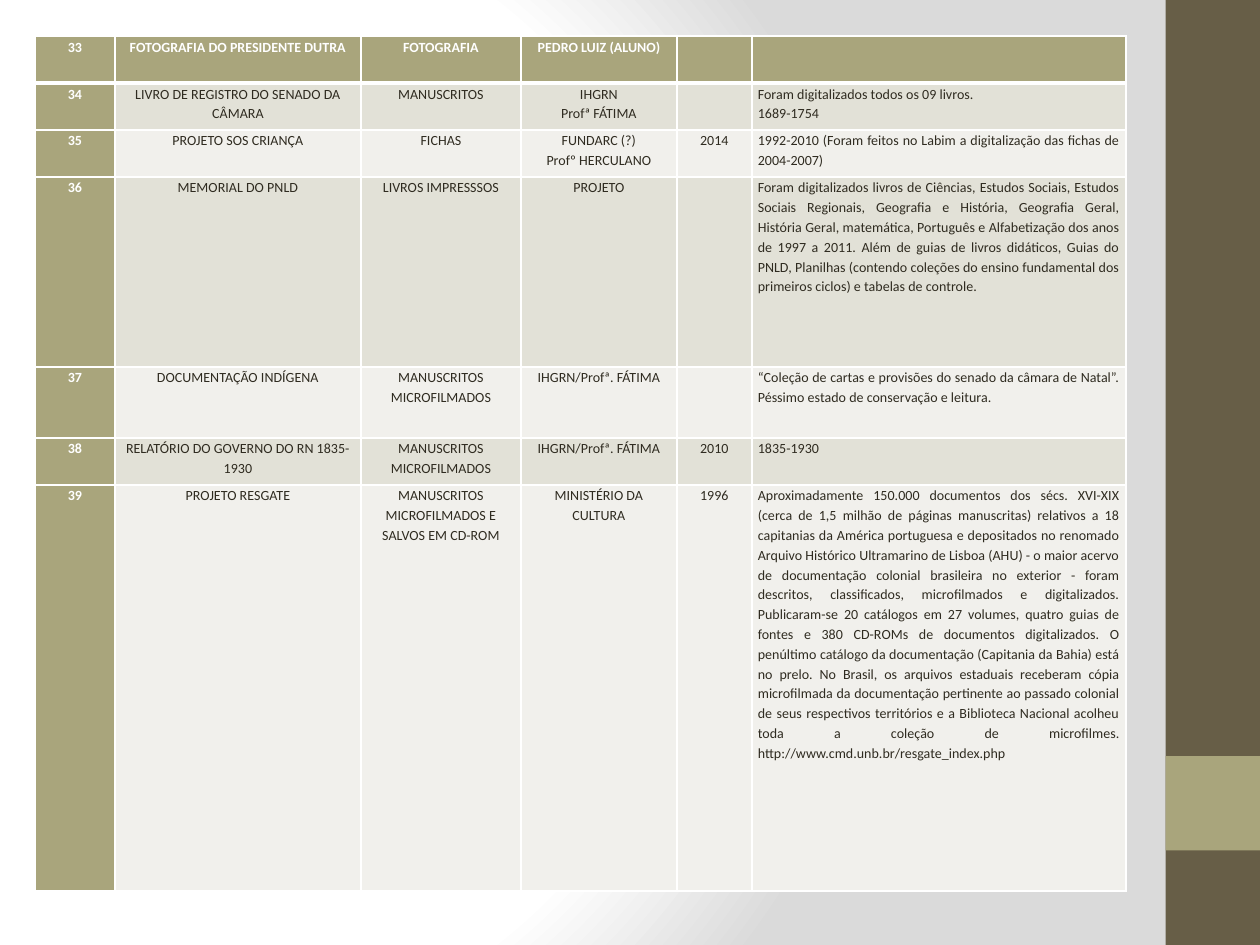
from lxml.etree import SubElement
from pptx import Presentation
from pptx.dml.color import RGBColor
from pptx.enum.shapes import MSO_SHAPE
from pptx.enum.text import PP_ALIGN
from pptx.oxml import parse_xml
from pptx.oxml.ns import nsdecls, qn
from pptx.util import Emu, Pt

PX = 914400 / 126
COLORS = {
    "brown": "675E47",
    "olive": "A9A57C",
    "white": "FFFFFF",
    "gray": "DADADA",
    "ink": "2F2B20",
    "dark band": "E2E1D7",
    "light band": "F1F0EC",
}
GRADIENT = [(0, "white"), (75, "white"), (100, "gray")]
COLUMN_WIDTHS = [80, 246, 160, 156, 75, 374]
ROW_HEIGHTS = [47, 47, 47, 190, 71, 47, 406]
ROWS = [
    ["33", "FOTOGRAFIA DO PRESIDENTE DUTRA", "FOTOGRAFIA", "PEDRO LUIZ (ALUNO)", "", ""],
    ["34", "LIVRO DE REGISTRO DO SENADO DA CÂMARA", "MANUSCRITOS",
     "IHGRN\nProfª FÁTIMA", "",
     "Foram digitalizados todos os 09 livros.\n1689-1754"],
    ["35", "PROJETO SOS CRIANÇA", "FICHAS", "FUNDARC (?)\nProfº HERCULANO", "2014",
     "1992-2010 (Foram feitos no Labim a digitalização das fichas de 2004-2007)"],
    ["36", "MEMORIAL DO PNLD", "LIVROS IMPRESSSOS", "PROJETO", "",
     "Foram digitalizados livros de Ciências, Estudos Sociais, Estudos Sociais "
     "Regionais, Geografia e História, Geografia Geral, História Geral, matemática, "
     "Português e Alfabetização dos anos de 1997 a 2011. Além de guias de livros "
     "didáticos, Guias do PNLD, Planilhas (contendo coleções do ensino fundamental "
     "dos primeiros ciclos) e tabelas de controle."],
    ["37", "DOCUMENTAÇÃO INDÍGENA", "MANUSCRITOS MICROFILMADOS", "IHGRN/Profª. FÁTIMA", "",
     "“Coleção de cartas e provisões do senado da câmara de Natal”. "
     "Péssimo estado de conservação e leitura."],
    ["38", "RELATÓRIO DO GOVERNO DO RN 1835-1930", "MANUSCRITOS MICROFILMADOS",
     "IHGRN/Profª. FÁTIMA", "2010", "1835-1930"],
    ["39", "PROJETO RESGATE", "MANUSCRITOS MICROFILMADOS E SALVOS EM CD-ROM",
     "MINISTÉRIO DA CULTURA", "1996",
     "Aproximadamente 150.000 documentos dos sécs. XVI-XIX (cerca de 1,5 milhão de "
     "páginas manuscritas) relativos a 18 capitanias da América portuguesa e "
     "depositados no renomado Arquivo Histórico Ultramarino de Lisboa (AHU) - o maior "
     "acervo de documentação colonial brasileira no exterior - foram descritos, "
     "classificados, microfilmados e digitalizados. Publicaram-se 20 catálogos em 27 "
     "volumes, quatro guias de fontes e 380 CD-ROMs de documentos digitalizados. O "
     "penúltimo catálogo da documentação (Capitania da Bahia) está no prelo. No "
     "Brasil, os arquivos estaduais receberam cópia microfilmada da documentação "
     "pertinente ao passado colonial de seus respectivos territórios e a Biblioteca "
     "Nacional acolheu toda a coleção de microfilmes. "
     "http://www.cmd.unb.br/resgate_index.php"],
]


def px(length):
    return Emu(round(length * PX))


def rgb(name):
    return RGBColor.from_string(COLORS[name])


def set_attributes(target, values):
    for name, value in values.items():
        setattr(target, name, value)


class SlideBuilder:
    font = {"name": "Calibri", "size": Pt(8)}
    cell_format = {"margin_left": px(6), "margin_right": px(6),
                   "margin_top": 0, "margin_bottom": 0}

    def __init__(self, slide):
        self.slide = slide

    def background(self, stops):
        """Fill the background with a circular gradient spreading to the right."""
        stop_xml = "".join(
            f'<a:gs pos="{position * 1000}"><a:srgbClr val="{COLORS[color]}"/></a:gs>'
            for position, color in stops)
        self.slide.element.cSld.insert(0, parse_xml(
            f'<p:bg {nsdecls("p", "a")}><p:bgPr><a:gradFill rotWithShape="1">'
            f'<a:gsLst>{stop_xml}</a:gsLst><a:path path="circle">'
            '<a:fillToRect l="20000" t="50000" r="100000" b="50000"/></a:path>'
            '</a:gradFill><a:effectLst/></p:bgPr></p:bg>'))

    def rectangle(self, left, top, width, height, color):
        shape = self.slide.shapes.add_shape(
            MSO_SHAPE.RECTANGLE, px(left), px(top), px(width), px(height))
        shape.shadow.inherit = False
        shape.fill.solid()
        shape.fill.fore_color.rgb = rgb(color)
        shape.line.fill.background()

    def table(self, left, top, widths, heights, rows):
        table = self.slide.shapes.add_table(
            len(heights), len(widths), px(left), px(top),
            px(sum(widths)), px(sum(heights))).table
        table.horz_banding = False
        for column, width in zip(table.columns, widths):
            column.width = px(width)
        for row, height in zip(table.rows, heights):
            row.height = px(height)
        for row_index, texts in enumerate(rows):
            for column_index, text in enumerate(texts):
                self.cell(table.cell(row_index, column_index), text,
                          row_index, column_index, column_index == len(widths) - 1)

    def cell(self, cell, text, row, column, is_note):
        heading = row == 0 or column == 0
        band = "dark band" if row % 2 else "light band"
        set_attributes(cell, self.cell_format)
        self.borders(cell, {"lnL": 1, "lnR": 1, "lnT": 3 if row == 1 else 1,
                            "lnB": 3 if row == 0 else 1})
        cell.fill.solid()
        cell.fill.fore_color.rgb = rgb("olive" if heading else band)
        if not text:
            return
        cell.text = text
        for index, paragraph in enumerate(cell.text_frame.paragraphs):
            note_alignment = PP_ALIGN.LEFT if index else PP_ALIGN.JUSTIFY
            set_attributes(paragraph, {
                "alignment": note_alignment if is_note else PP_ALIGN.CENTER,
                "line_spacing": 1.15})
            for run in paragraph.runs:
                set_attributes(run.font, {**self.font, "bold": heading})
                run.font.color.rgb = rgb("white" if heading else "ink")

    def borders(self, cell, widths):
        properties = cell._tc.get_or_add_tcPr()
        for side, width in widths.items():
            line = SubElement(properties, qn(f"a:{side}"), w=str(Pt(width)))
            fill = SubElement(line, qn("a:solidFill"))
            SubElement(fill, qn("a:srgbClr"), val=COLORS["white"])


def main():
    presentation = Presentation()
    presentation.slide_width = px(1260)
    presentation.slide_height = px(945)
    builder = SlideBuilder(presentation.slides.add_slide(presentation.slide_layouts[6]))
    builder.background(GRADIENT)
    builder.rectangle(1165.5, 0, 94.5, 945, "brown")
    builder.rectangle(1165.5, 756, 94.5, 94.5, "olive")
    builder.table(35, 36, COLUMN_WIDTHS, ROW_HEIGHTS, ROWS)
    presentation.save("out.pptx")


if __name__ == "__main__":
    main()
